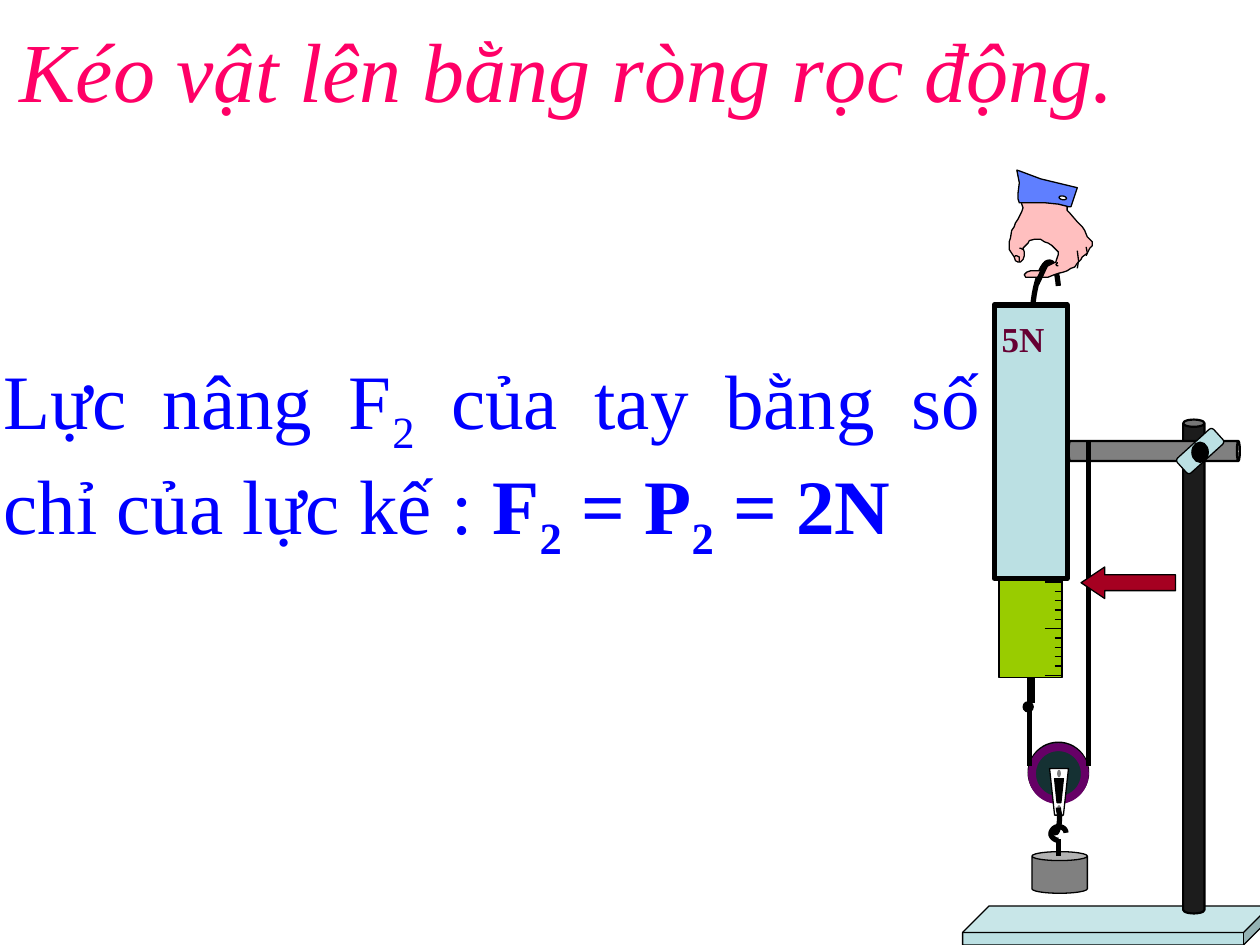
from lxml import etree
from pptx import Presentation
from pptx.dml.color import RGBColor
from pptx.enum import shapes as kinds, text as styles
from pptx.oxml import ns
from pptx.util import Inches, Pt

SHAPE = kinds.MSO_SHAPE
BLACK, GREY, PALE, WHITE = "000000", "808080", "BBE0E3", "FFFFFF"

# Outlines of the hand, in inches from the corner of its box
HAND = [
    (.21, .90), (.17, .91), (.16, .93), (.14, .95), (.12, .97), (.13, 1), (.13, 1.03),
    (.12, 1.06), (.10, 1.08), (.08, 1.08), (.06, 1.07), (.05, 1.04), (.03, 1.01),
    (.01, .98), (.01, .92), (.02, .89), (.03, .83), (.05, .80), (.06, .77), (.08, .74),
    (.11, .68), (.12, .65), (.11, .62), (.10, .58), (.11, .54), (.12, .53), (.16, .55),
    (.21, .56), (.38, .56), (.48, .57), (.50, .56), (.48, .61), (.47, .64), (.47, .67),
    (.49, .69), (.55, .76), (.59, .80), (.61, .83), (.63, .88), (.65, .90), (.67, .92),
    (.67, .95), (.65, .97), (.63, 1.01), (.59, 1.04), (.58, 1.06), (.55, 1.09),
    (.53, 1.12), (.50, 1.13), (.47, 1.15), (.44, 1.16), (.40, 1.17), (.37, 1.18),
    (.32, 1.20), (.14, 1.20), (.13, 1.18), (.15, 1.16), (.18, 1.15), (.26, 1.15),
    (.30, 1.12), (.34, 1.10), (.38, 1.08), (.39, 1.05), (.40, 1.02), (.40, 1),
    (.39, .99), (.37, .97), (.35, .95), (.32, .93), (.29, .92), (.26, .90)]
CREASES = [
    [(.55, 1.13), (.56, 1.07), (.55, .99)],
    [(.09, 1.08), (.09, 1.04), (.07, 1.03), (.06, 1.03), (.05, 1.04)],
    [(.40, 1.11), (.39, 1.11), (.38, 1.10), (.39, 1.09), (.39, 1.08)],
    [(.27, 1.17), (.26, 1.16), (.26, 1.15), (.27, 1.14)],
    [(.12, .98), (.10, .97), (.09, .97)],
    [(.62, 1.03), (.63, 1.01), (.62, .96)]]
SLEEVE = [
    (.09, .61), (.24, .61), (.30, .61), (.40, .62), (.48, .64), (.50, .64), (.55, .49),
    (.26, .42), (.10, .36), (.07, .35), (.09, .45), (.08, .53), (.08, .58)]


def color(value):
    return RGBColor.from_string(value)


def paint(part, fill, line, width):
    part.shadow.inherit = False
    if fill:
        part.fill.solid()
        part.fill.fore_color.rgb = color(fill)
    else:
        part.fill.background()
    if line:
        part.line.color.rgb = color(line)
        part.line.width = Pt(width)
    else:
        part.line.fill.background()
    return part


def preset(slide, box, kind, x, y, w, h, fill, line=BLACK, width=.75, turn=0, adjust=()):
    part = slide.shapes.add_shape(
        kind, Inches(box[0] + x), Inches(box[1] + y), Inches(w), Inches(h))
    for index, value in enumerate(adjust):
        part.adjustments[index] = value
    part.rotation = turn
    return paint(part, fill, line, width)


def outline(slide, box, points, fill=None, width=.75, close=True):
    places = [(Inches(box[0] + x), Inches(box[1] + y)) for x, y in points]
    builder = slide.shapes.build_freeform(*places[0])
    builder.add_line_segments(places[1:], close=close)
    return paint(builder.convert_to_shape(), fill, BLACK, width)


def curve(points, steps=8):
    """Points along a chain of cubic curves."""
    track = [points[0]]
    for first in range(0, len(points) - 1, 3):
        a, b, c, d = points[first:first + 4]
        for step in range(1, steps + 1):
            t = step / steps
            weights = ((1 - t) ** 3, 3 * t * (1 - t) ** 2, 3 * t * t * (1 - t), t ** 3)
            track.append(tuple(sum(w * p[axis] for w, p in zip(weights, (a, b, c, d)))
                               for axis in (0, 1)))
    return track


def stroke(slide, box, x1, y1, x2, y2, width=.75):
    link = slide.shapes.add_connector(
        kinds.MSO_CONNECTOR.STRAIGHT, Inches(box[0] + x1), Inches(box[1] + y1),
        Inches(box[0] + x2), Inches(box[1] + y2))
    link.line.color.rgb = color(BLACK)
    link.line.width = Pt(width)
    etree.SubElement(link._element.spPr, ns.qn("a:effectLst"))
    return link


def words(slide, x, y, w, h, runs, size, tint, italic=False, align=None, gap=False):
    """Each run is (text, bold, subscript)."""
    frame = slide.shapes.add_textbox(Inches(x), Inches(y), Inches(w), Inches(h)).text_frame
    frame.word_wrap = True
    line = frame.paragraphs[0]
    line.alignment = align
    if gap:  # half a line of space before
        before = etree.SubElement(line._p.get_or_add_pPr(), ns.qn("a:spcBef"))
        etree.SubElement(before, ns.qn("a:spcPct")).set("val", "50000")
    for content, bold, subscript in runs:
        run = line.add_run()
        run.text = content
        run.font.name, run.font.size = "Times New Roman", Pt(size)
        run.font.bold, run.font.italic = bold, italic
        run.font.color.rgb = color(tint)
        if subscript:
            run._r.get_or_add_rPr().set("baseline", "-25000")


def stand(slide, box):
    preset(slide, box, SHAPE.CUBE, 0, 3.86, 2.44, .31, PALE, adjust=[.678])
    preset(slide, box, SHAPE.CAN, 1.75, 0, .17, 3.92, "1C1C1C", width=1.25, adjust=[.339])
    preset(slide, box, SHAPE.CAN, 1.44, -.43, .16, 1.36, GREY, width=1.25, turn=90,
           adjust=[.15])
    # Clamp and bolt
    preset(slide, box, SHAPE.ROUNDED_RECTANGLE, 1.69, .17, .39, .16, PALE, turn=137.8)
    preset(slide, box, SHAPE.OVAL, 1.82, .18, .13, .16, BLACK)


def pulley(slide, box):
    # Wheel
    preset(slide, box, SHAPE.OVAL, 0, 0, .48, .48, "153133")
    preset(slide, box, SHAPE.OVAL, .03, .04, .42, .42, None, "660066", 4.5)
    # Bracket with its slot and pins
    outline(slide, box, [(.17, .21), (.21, .58), (.28, .58), (.32, .21)], WHITE)
    outline(slide, box, [(.21, .29), (.23, .48), (.26, .48), (.28, .29)], BLACK)
    for pin_top in (.22, .50):
        preset(slide, box, SHAPE.OVAL, .23, pin_top, .03, .06, GREY, None)
    # Weight on its hook
    link = [(.24, .52), (.24, .54), (.25, .57), (.25, .59), (.25, .67), (.23, .72),
            (.22, .72), (.21, .72), (.21, .71), (.20, .68)]
    hook = [(.24, .78), (.21, .78), (.18, .75), (.18, .73), (.18, .70), (.21, .67),
            (.24, .67), (.27, .67), (.30, .69), (.30, .72)]
    outline(slide, box, curve(link), width=3, close=False)
    preset(slide, box, SHAPE.CAN, .03, .87, .44, .33, GREY, adjust=[.214])
    outline(slide, box, curve(hook), width=3, close=False)
    stroke(slide, box, .24, .77, .24, .90, 3)
    # Ropes
    for x, bottom, top in ((.48, -1.06, -2.39), (.48, .19, -1.14), (.01, .19, -1.14)):
        stroke(slide, box, x, bottom, x, top, 3)


def dynamometer(slide, box):
    scale = preset(slide, box, SHAPE.RECTANGLE, .04, .90, .50, 2.06, "99CC00")
    rod = stroke(slide, box, .29, 2.96, .29, 3.16, 4.5)
    rod.begin_connect(scale, 2)
    # Graduations, every fifth one long
    stroke(slide, box, .54, 2.12, .54, 2.94)
    for mark in range(11):
        y = 2.20 + mark * .074
        stroke(slide, box, .40 if mark % 5 == 0 else .48, y, .54, y)
    # Top loop, tube and reading
    loop = [(.31, .13), (.31, .08), (.31, -.02), (.31, -.02), (.33, -.20), (.39, -.35),
            (.44, -.34), (.48, -.34), (.50, -.26), (.51, -.15)]
    outline(slide, box, curve(loop), width=3, close=False)
    preset(slide, box, SHAPE.RECTANGLE, 0, 0, .58, 2.17, PALE, width=3)
    words(slide, box[0] - .04, box[1] + .05, .92, .45, [("5N", True, False)], 20,
          "660033", gap=True)
    preset(slide, box, SHAPE.OVAL, .23, 3.15, .08, .08, BLACK)


def hand(slide, box):
    outline(slide, box, HAND, "FFBFBF")
    for crease in CREASES:
        outline(slide, box, crease, close=False)
    # Sleeve and button
    outline(slide, box, SLEEVE, "5F7FFF")
    preset(slide, box, SHAPE.OVAL, .42, .54, .03, .06, WHITE, turn=280.1)
    # Loop over the finger
    stroke(slide, box, .31, 1.08, .23, 1.25, 3)


def main():
    deck = Presentation()
    deck.slide_width, deck.slide_height = Inches(10), Inches(7.5)
    slide = deck.slides.add_slide(deck.slide_layouts[6])
    stand(slide, (7.64, 3.33))
    pulley(slide, (8.16, 5.89))
    dynamometer(slide, (7.89, 2.42))
    hand(slide, (8, 1))
    # Pointer to the rope
    preset(slide, (8.58, 4.5), SHAPE.LEFT_ARROW, 0, 0, .75, .25, "A50021",
           adjust=[.5, .75])
    # Title and statement
    words(slide, .06, .1, 9.66, .9, [("Kéo vật lên bằng ròng rọc động.", False, False)],
          48, "FF0066", italic=True)
    words(slide, -.07, 2.75, 7.95, 1.57, [
        ("Lực nâng F", False, False), ("2", False, True),
        (" của tay bằng số chỉ của lực kế : ", False, False), ("F", True, False),
        ("2", True, True), (" = P", True, False), ("2", True, True),
        (" = 2N", True, False)], 44, "0000FF", align=styles.PP_ALIGN.JUSTIFY, gap=True)
    deck.save("out.pptx")


if __name__ == "__main__":
    main()
